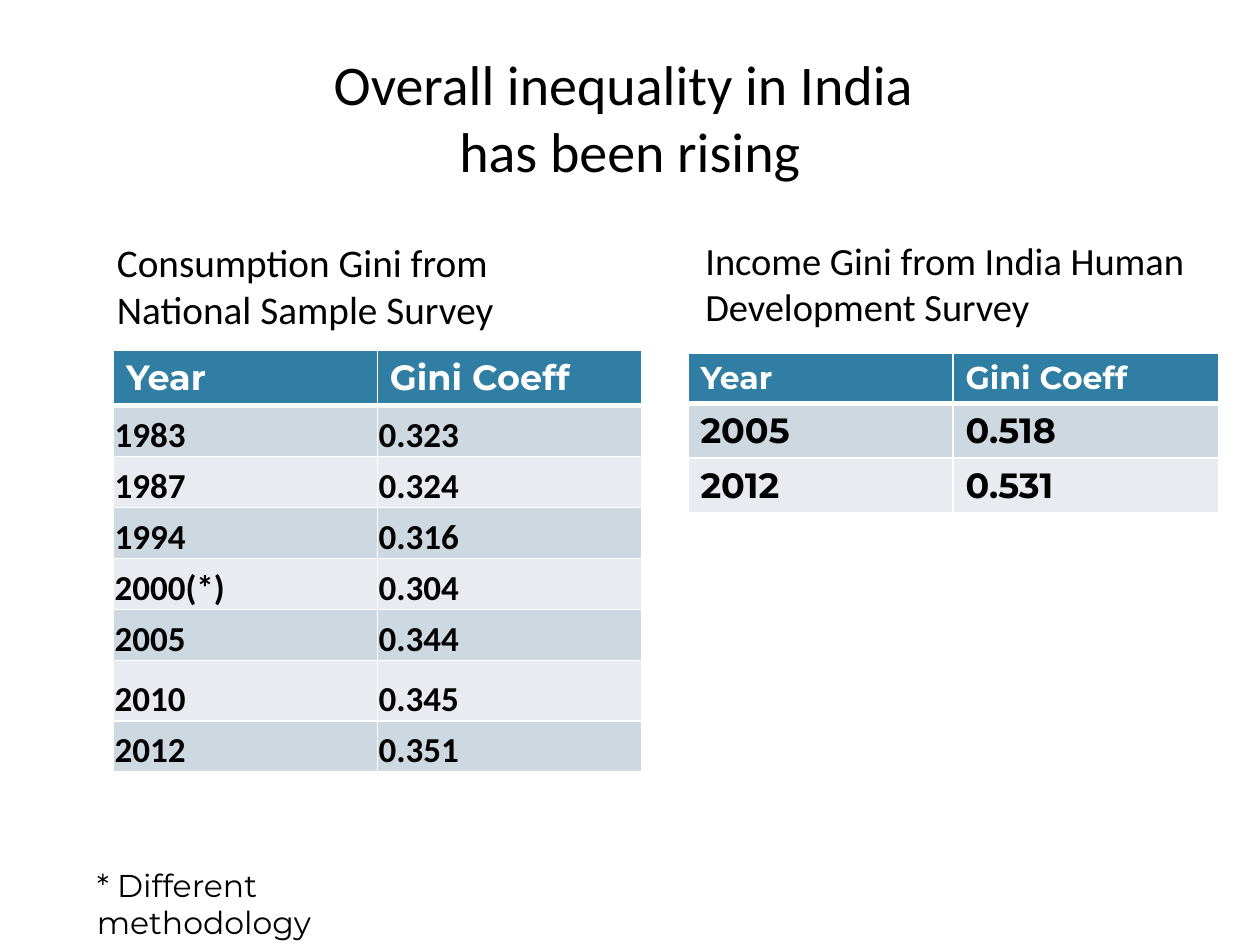
from lxml.etree import SubElement
from pptx import Presentation
from pptx.dml.color import RGBColor
from pptx.enum.text import MSO_ANCHOR as Anchor, PP_ALIGN as Align
from pptx.oxml.ns import qn
from pptx.util import Inches, Pt

BLACK = RGBColor(0x00, 0x00, 0x00)
WHITE = RGBColor(0xFF, 0xFF, 0xFF)
HEADER = RGBColor(0x30, 0x7E, 0xA3)
BANDS = (RGBColor(0xCD, 0xD8, 0xE0), RGBColor(0xE8, 0xEC, 0xF0))

CONSUMPTION = (
    ("1983", "0.323"), ("1987", "0.324"), ("1994", "0.316"), ("2000(*)", "0.304"),
    ("2005", "0.344"), ("2010", "0.345"), ("2012", "0.351"),
)
INCOME = (("2005", "0.518"), ("2012", "0.531"))
TIGHT = {
    "vertical_anchor": Anchor.BOTTOM, "margin_left": Inches(0.01),
    "margin_right": Inches(0.01), "margin_top": Inches(0.01), "margin_bottom": 0,
}


def assign(target, values):
    for name, value in values.items():
        setattr(target, name, value)


class Page:
    COLUMNS, ROWS = 100, 75

    def __init__(self, deck):
        self.slide = deck.slides.add_slide(deck.slide_layouts[6])
        self.column = deck.slide_width / self.COLUMNS
        self.row = deck.slide_height / self.ROWS

    def place(self, left, top, width, height):
        return (int(left * self.column), int(top * self.row),
                int(width * self.column), int(height * self.row))

    def style(self, para, size, face="Calibri", color=BLACK, bold=False):
        assign(para.font, {"size": Pt(size), "name": face, "bold": bold})
        para.font.color.rgb = color

    def text(self, words, area, size, face="Calibri", align=Align.LEFT, anchor=Anchor.TOP):
        frame = self.slide.shapes.add_textbox(*self.place(*area)).text_frame
        assign(frame, {"word_wrap": True, "vertical_anchor": anchor})
        para = frame.paragraphs[0]
        para.text = words
        para.alignment = align
        self.style(para, size, face)

    def borders(self, cell, top, bottom):
        props = cell._tc.get_or_add_tcPr()
        for side, width in (("L", 1), ("R", 1), ("T", top), ("B", bottom)):
            line = SubElement(props, qn("a:ln" + side), w=str(Pt(width)))
            fill = SubElement(line, qn("a:solidFill"))
            SubElement(fill, qn("a:srgbClr"), val=str(WHITE))

    def table(self, records, area, heights, head_size, face, layout):
        rows = (("Year", "Gini Coeff"), *records)
        box = self.place(*area, sum(heights))
        table = self.slide.shapes.add_table(len(rows), 2, *box).table
        for index, (record, height) in enumerate(zip(rows, heights)):
            table.rows[index].height = int(height * self.row)
            header = index == 0
            for position, words in enumerate(record):
                cell = table.cell(index, position)
                cell.text = words
                self.borders(cell, 3 if index == 1 else 1, 3 if header else 1)
                cell.fill.solid()
                cell.fill.fore_color.rgb = HEADER if header else BANDS[(index - 1) % 2]
                para = cell.text_frame.paragraphs[0]
                if header:
                    self.style(para, head_size, "Montserrat", WHITE, True)
                else:
                    assign(cell, layout)
                    self.style(para, 20, face, bold=True)


def main():
    deck = Presentation()
    assign(deck, {"slide_width": Inches(10), "slide_height": Inches(7.5)})
    page = Page(deck)
    page.text("Overall inequality in India \vhas been rising", (5, 3, 90, 12.5), 32,
              align=Align.CENTER, anchor=Anchor.MIDDLE)
    page.text("Consumption Gini from National Sample Survey", (8.3, 18.4, 41.7, 7), 22.4)
    page.table(CONSUMPTION, (9, 27.8, 41.9), (4.4, *[4.05] * 5, 4.8, 4.05), 20, "Calibri", TIGHT)
    page.text("Income Gini from India Human Development Survey", (55, 18.3, 41.7, 7), 22)
    page.table(INCOME, (54.6, 28, 42.1), (4, 4.3, 4.3), 18, "Montserrat", {})
    page.text("* Different methodology", (6.7, 68.2, 28.3, 7.1), 18, "Montserrat")
    deck.save("out.pptx")


if __name__ == "__main__":
    main()
